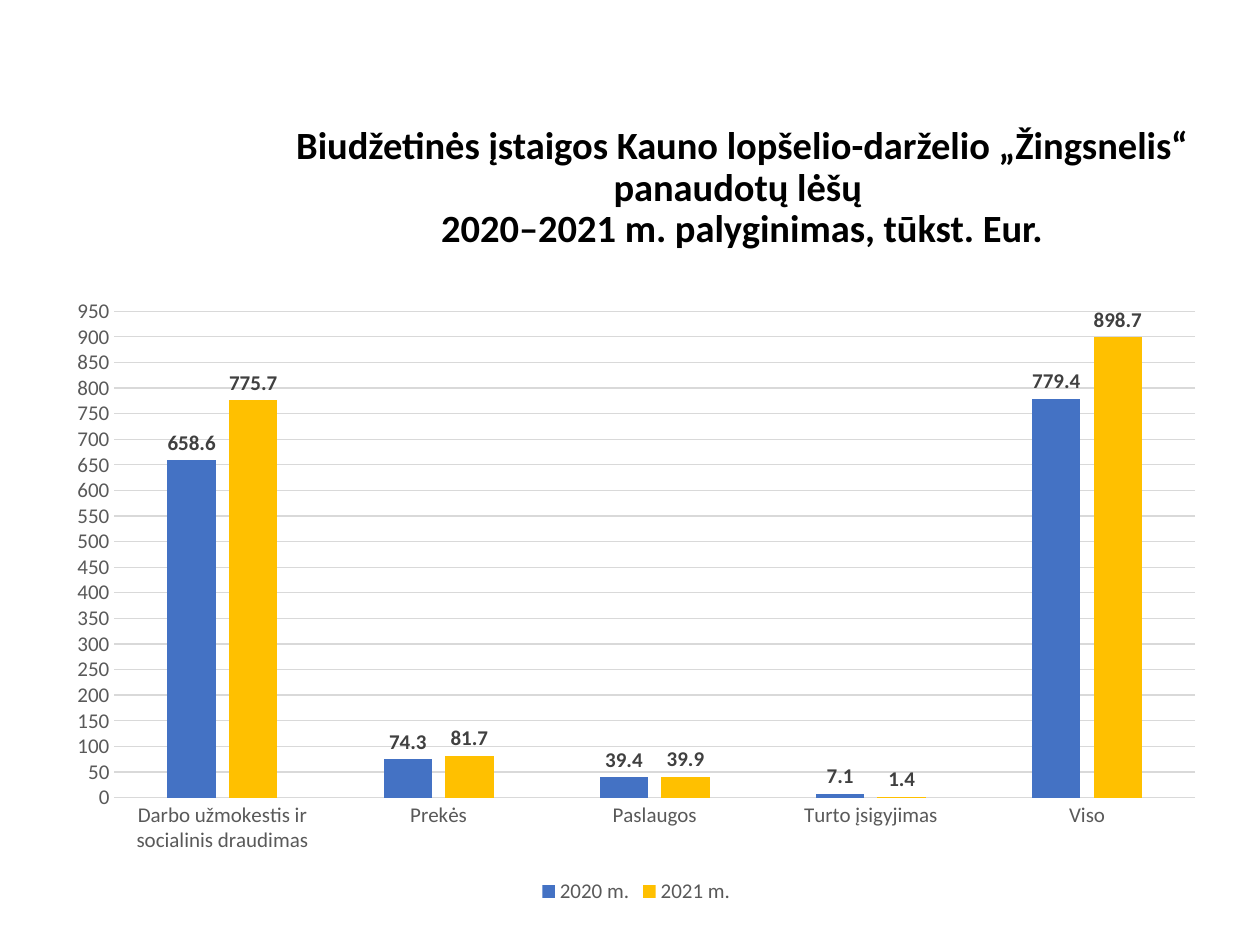
from pptx import Presentation
from pptx.chart.data import CategoryChartData
from pptx.dml.color import RGBColor
from pptx.enum.chart import XL_CHART_TYPE, XL_LABEL_POSITION, XL_LEGEND_POSITION, XL_TICK_MARK
from pptx.enum.text import MSO_ANCHOR, PP_ALIGN
from pptx.util import Inches, Pt

COLUMNS = XL_CHART_TYPE.COLUMN_CLUSTERED
OUTSIDE_END = XL_LABEL_POSITION.OUTSIDE_END
BOTTOM = XL_LEGEND_POSITION.BOTTOM
NO_TICK = XL_TICK_MARK.NONE
MIDDLE = MSO_ANCHOR.MIDDLE
CENTER = PP_ALIGN.CENTER

WIDTH, HEIGHT = Inches(10), Inches(7.5)
FONT = "Calibri"
BLACK, GREY, DARK_GREY, PALE_GREY = "000000", "595959", "404040", "D9D9D9"

TITLE = (
    "Biudžetinės įstaigos Kauno lopšelio-darželio „Žingsnelis“ panaudotų lėšų \v"
    "2020–2021 m. palyginimas, tūkst. Eur."
)
EXPENSES = ["Darbo užmokestis ir socialinis draudimas", "Prekės", "Paslaugos",
            "Turto įsigyjimas", "Viso"]
YEARS = [
    ("2020 m.", [658.6, 74.3, 39.4, 7.1, 779.4], "4472C4"),
    ("2021 m.", [775.7, 81.7, 39.9, 1.4, 898.7], "FFC000"),
]


def color(hex_code):
    return RGBColor.from_string(hex_code)


def place(left, top, width, height):
    return int(WIDTH * left), int(HEIGHT * top), int(WIDTH * width), int(HEIGHT * height)


def style_font(font, size=12, hue=GREY, bold=False):
    font.name = FONT
    font.size = Pt(size)
    font.bold = bold
    font.color.rgb = color(hue)


def style_line(line, hue=PALE_GREY, width=0.75):
    line.color.rgb = color(hue)
    line.width = Pt(width)


def add_text(slide, text, area, align=CENTER, anchor=MIDDLE, spacing=0.9, **font_format):
    frame = slide.shapes.add_textbox(*area).text_frame
    frame.word_wrap = True
    frame.vertical_anchor = anchor
    paragraph = frame.paragraphs[0]
    paragraph.text = text
    paragraph.alignment = align
    paragraph.line_spacing = spacing
    for run in paragraph.runs:
        style_font(run.font, **font_format)


def style_axis(axis):
    axis.major_tick_mark = axis.minor_tick_mark = NO_TICK
    style_font(axis.tick_labels.font)


def style_year(series, hue):
    series.invert_if_negative = False
    series.format.fill.solid()
    series.format.fill.fore_color.rgb = color(hue)
    labels = series.data_labels
    labels.show_value = True
    labels.position = OUTSIDE_END
    style_font(labels.font, hue=DARK_GREY, bold=True)


def add_expense_chart(slide, area):
    expenses = CategoryChartData(number_format="General")
    expenses.categories = EXPENSES
    for year, amounts, _ in YEARS:
        expenses.add_series(year, amounts)
    chart = slide.shapes.add_chart(COLUMNS, *area, expenses).chart
    style_font(chart.font, size=10, hue=BLACK)
    chart.has_title = False
    chart.has_legend = True
    chart.legend.position = BOTTOM
    chart.legend.include_in_layout = False
    style_font(chart.legend.font)

    style_axis(chart.category_axis)
    style_line(chart.category_axis.format.line)
    amount_axis = chart.value_axis
    style_axis(amount_axis)
    amount_axis.format.line.fill.background()
    amount_axis.minimum_scale, amount_axis.maximum_scale = 0, 950
    amount_axis.major_unit = 50
    amount_axis.has_major_gridlines = True
    style_line(amount_axis.major_gridlines.format.line)

    plot = chart.plots[0]
    plot.gap_width, plot.overlap = 219, -27
    plot.vary_by_categories = False
    for series, (_, _, hue) in zip(plot.series, YEARS):
        style_year(series, hue)


def main():
    presentation = Presentation()
    presentation.slide_width, presentation.slide_height = WIDTH, HEIGHT
    slide = presentation.slides.add_slide(presentation.slide_layouts[6])
    add_text(slide, TITLE, place(0.2, 0.117, 0.778, 0.165), size=22, hue=BLACK, bold=True)
    add_expense_chart(slide, place(0.043, 0.303, 0.924, 0.659))
    presentation.save("out.pptx")


if __name__ == "__main__":
    main()
